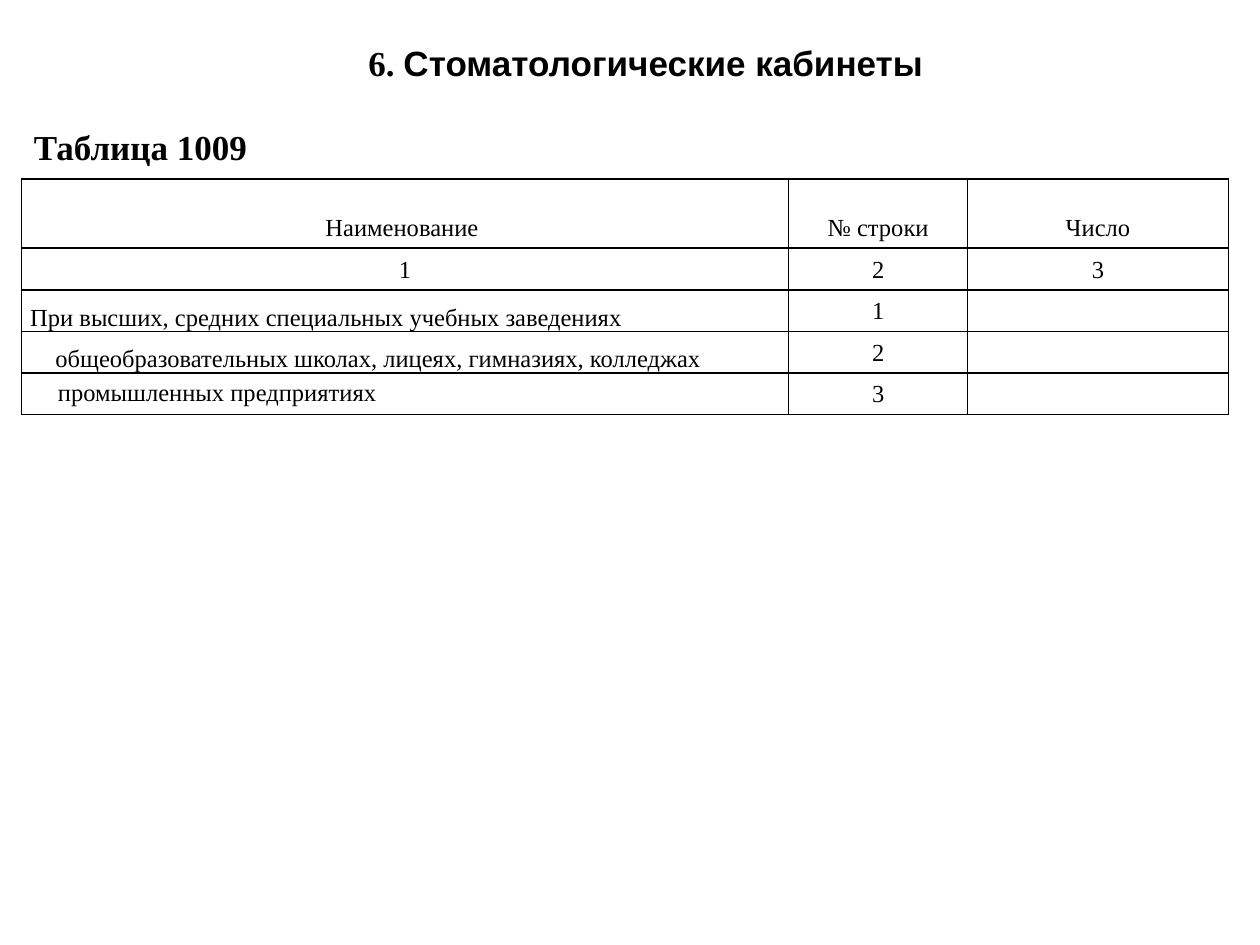
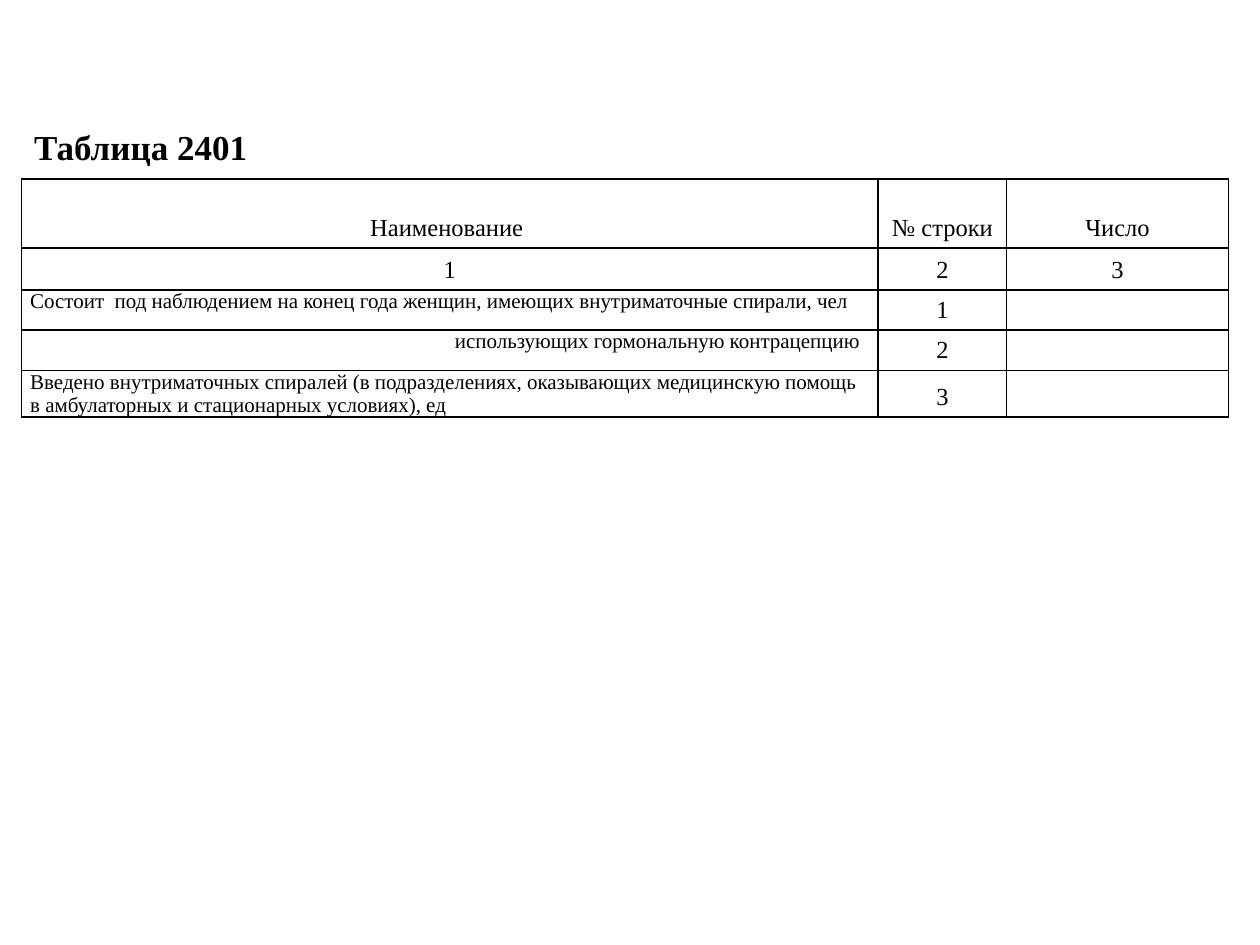
import pptx
import pptx.util
import pptx.dml.color
import pptx.enum.text
import pptx.oxml
import pptx.oxml.ns

Inches, Pt = pptx.util.Inches, pptx.util.Pt
PP_ALIGN, MSO_ANCHOR = pptx.enum.text.PP_ALIGN, pptx.enum.text.MSO_ANCHOR
BLACK = pptx.dml.color.RGBColor(0x00, 0x00, 0x00)
SERIF, SANS = "Times New Roman", "Arial"
HEADER = ["Наименование ", "№ строки", "Число"]
NUMBERS = ["1", "2", "3"]
TITLE_ONLY = 5

# Row labels: text, left indent, (side inset, top inset), anchor
TABLES = [
    {
        "heading": [("6. ", SERIF), ("Стоматологические кабинеты", SANS)],
        "caption": "Таблица 1009",
        "cols": [6.09, 1.42, 2.07],
        "rows": [0.55, 0.33, 0.33, 0.33, 0.33],
        "size": 14,
        "labels": [
            ("При высших, средних специальных учебных заведениях",
             0, (0.07, 0), MSO_ANCHOR.BOTTOM),
            ("общеобразовательных школах, лицеях, гимназиях, колледжах",
             0.2, (0.07, 0), MSO_ANCHOR.BOTTOM),
            ("промышленных предприятиях",
             0.19, (0.1, 0.05), MSO_ANCHOR.TOP),
        ],
    },
    {
        "heading": None,
        "caption": "Таблица 2401",
        "cols": [6.8, 1.02, 1.76],
        "rows": [0.55, 0.33, 0.32, 0.32, 0.37],
        "size": 12,
        "labels": [
            ("Состоит  под наблюдением на конец года женщин, имеющих "
             "внутриматочные спирали, чел",
             0, (0.07, 0), MSO_ANCHOR.TOP),
            ("использующих гормональную контрацепцию",
             3.37, (0.07, 0), MSO_ANCHOR.TOP),
            ("Введено внутриматочных спиралей (в подразделениях, оказывающих "
             "медицинскую помощь в амбулаторных и стационарных условиях), ед",
             0, (0.07, 0), MSO_ANCHOR.TOP),
        ],
    },
]


def style_title(shape, box, align):
    """Place a heading or caption and return its paragraph."""
    shape.left, shape.top, shape.width, shape.height = map(Inches, box)
    tf = shape.text_frame
    tf.word_wrap = True
    tf.auto_size = pptx.enum.text.MSO_AUTO_SIZE.NONE
    tf.vertical_anchor = MSO_ANCHOR.MIDDLE
    p = tf.paragraphs[0]
    p.alignment = align
    p.font.size, p.font.bold, p.font.color.rgb = Pt(20), True, BLACK
    return p


def fill_cell(cell, text, size=14, align=PP_ALIGN.CENTER, indent=0,
              insets=(0.1, 0.05), anchor=MSO_ANCHOR.BOTTOM):
    """Write one cell with black borders and no fill."""
    cell.margin_left = cell.margin_right = Inches(insets[0])
    cell.margin_top = cell.margin_bottom = Inches(insets[1])
    cell.vertical_anchor = anchor
    p = cell.text_frame.paragraphs[0]
    if text:
        p.add_run().text = text
    p.alignment = align
    if indent:
        p._p.get_or_add_pPr().set("marL", str(Inches(indent)))
    p.font.name, p.font.size, p.font.color.rgb = SERIF, Pt(size), BLACK
    tcPr = cell._tc.get_or_add_tcPr()
    for side in ("lnL", "lnR", "lnT", "lnB"):
        tcPr.append(pptx.oxml.parse_xml(
            f'<a:{side} {pptx.oxml.ns.nsdecls("a")} w="{Pt(1)}"><a:solidFill>'
            f'<a:srgbClr val="{BLACK}"/></a:solidFill></a:{side}>'))
    cell.fill.background()


prs = pptx.Presentation()
prs.slide_width, prs.slide_height = Inches(10), Inches(7.5)

for data in TABLES:
    s = prs.slides.add_slide(prs.slide_layouts[TITLE_ONLY])

    # Heading; without one the caption is the slide title
    caption = s.shapes.title
    if data["heading"]:
        p = style_title(s.shapes.title, (0.25, 0.08, 9.75, 0.83), PP_ALIGN.CENTER)
        for text, font in data["heading"]:
            r = p.add_run()
            r.text, r.font.name = text, font
        caption = s.shapes.add_textbox(0, 0, 0, 0)

    # Table caption
    p = style_title(caption, (0.17, 1, 2.25, 0.33), PP_ALIGN.LEFT)
    p.add_run().text = data["caption"]
    p.font.name = SERIF

    # Table grid
    cols, rows = data["cols"], data["rows"]
    table = s.shapes.add_table(
        len(rows), len(cols), Inches(0.17), Inches(1.42),
        Inches(sum(cols)), Inches(sum(rows))).table
    table.first_row = table.horz_banding = False
    for col, width in zip(table.columns, cols):
        col.width = Inches(width)
    for row, height in zip(table.rows, rows):
        row.height = Inches(height)

    # Header and column numbers
    for i, texts in enumerate((HEADER, NUMBERS)):
        for j, text in enumerate(texts):
            fill_cell(table.cell(i, j), text)

    # Numbered rows with an empty count
    for i, (text, indent, insets, anchor) in enumerate(data["labels"]):
        fill_cell(table.cell(i + 2, 0), text, data["size"], PP_ALIGN.LEFT,
                  indent, insets, anchor)
        fill_cell(table.cell(i + 2, 1), NUMBERS[i])
        fill_cell(table.cell(i + 2, 2), "", insets=(0.1, 0))

prs.save("out.pptx")
